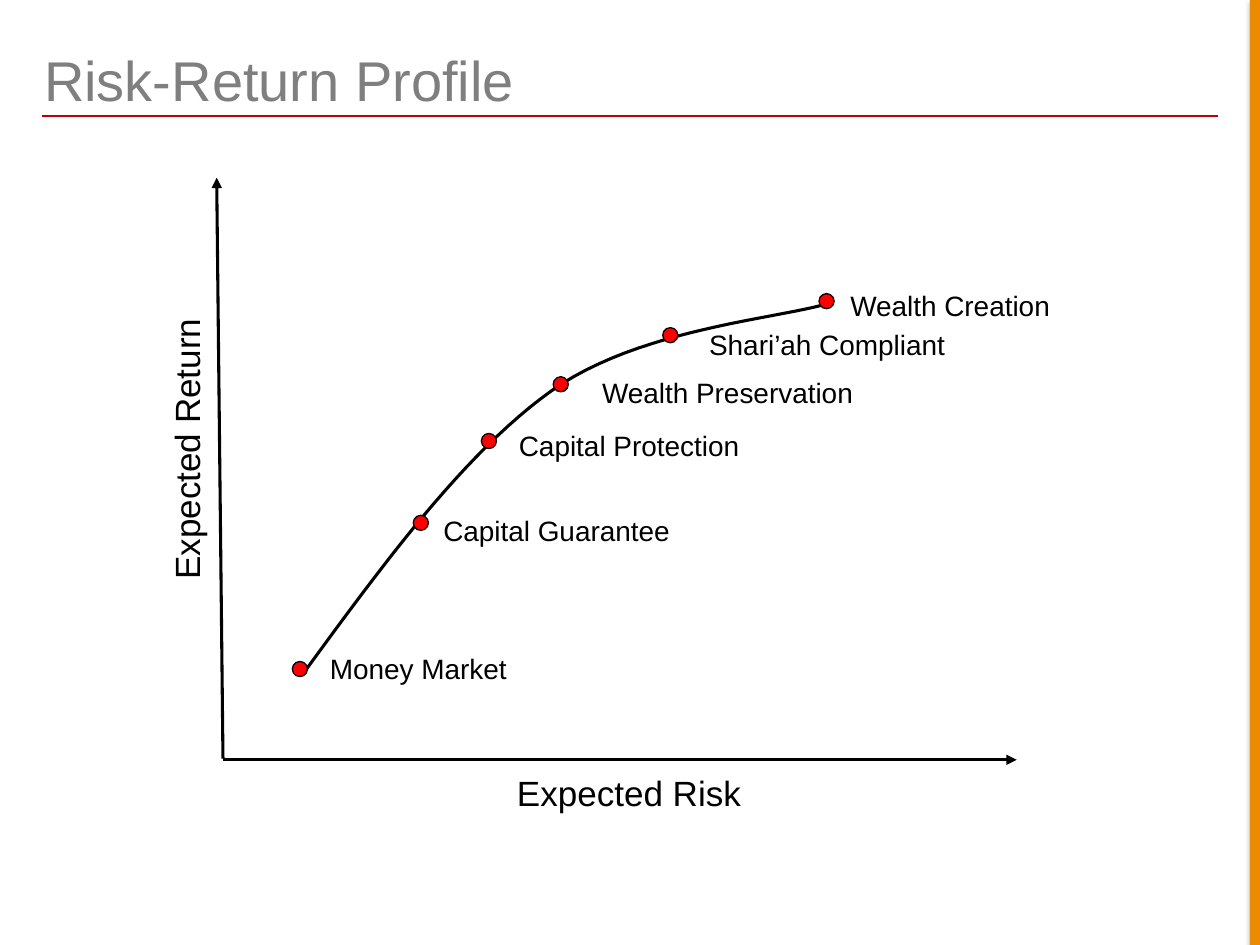
from lxml.etree import SubElement
from pptx import Presentation
from pptx.dml.color import RGBColor
from pptx.enum.shapes import MSO_CONNECTOR, MSO_SHAPE
from pptx.enum.text import MSO_ANCHOR, PP_ALIGN
from pptx.oxml.ns import qn
from pptx.util import Inches, Pt

BLACK = RGBColor(0, 0, 0)
GREY = RGBColor(0x7F, 0x7F, 0x7F)
RED = RGBColor(0xFF, 0, 0)
WINE = RGBColor(0xC0, 0, 0)
ORANGE = RGBColor(0xED, 0x8B, 0)

# Places are percent of slide width and height.
TITLE = "Risk-Return Profile"
FUNDS = [
    ("Money Market", (23.8, 70.8), (25.2, 68.27), 19.3),
    ("Capital Guarantee", (33.4, 55.33), (34.2, 53.73), 24.4),
    ("Capital Protection", (38.8, 46.67), (40.2, 44.67), 23.3),
    ("Wealth Preservation", (44.5, 40.67), (46.8, 39.07), 23.7),
    ("Shari’ah Compliant", (53.2, 35.47), (55.3, 34), 23.7),
    ("Wealth Creation", (65.6, 31.87), (66.5, 29.87), 24.4),
]
AXES = [((17.7, 80.27), (17.2, 18.8)), ((17.7, 80.4), (80.7, 80.4))]
CURVE = [
    ((24, 71.4), (30.4, 59.73), (36.8, 48), (43.8, 41.33)),
    ((43.8, 41.33), (50.7, 34.8), (61.7, 33.73), (65.7, 32.13)),
]
STEPS = 24
DOT = Inches(0.12)

deck = Presentation()
deck.slide_width, deck.slide_height = Inches(10), Inches(7.5)
slide = deck.slides.add_slide(deck.slide_layouts[6])
shapes = slide.shapes


def place(x, y):
    return round(deck.slide_width * x / 100), round(deck.slide_height * y / 100)


def write(text, at, size, points, color=BLACK, align=PP_ALIGN.LEFT):
    box = shapes.add_textbox(*place(*at), *place(*size))
    frame = box.text_frame
    frame.word_wrap = True
    para = frame.paragraphs[0]
    para.text = text
    para.alignment = align
    para.font.name = "Arial"
    para.font.size = Pt(points)
    para.font.color.rgb = color
    return box


def draw(start, end, color, width, arrow=False):
    line = shapes.add_connector(MSO_CONNECTOR.STRAIGHT, *place(*start), *place(*end))
    line.line.color.rgb = color
    line.line.width = Pt(width)
    if arrow:
        SubElement(line.line._get_or_add_ln(), qn("a:tailEnd"), type="triangle")
    SubElement(line._element.spPr, qn("a:effectLst"))


def bezier(points, t):
    shares = ((1 - t) ** 3, 3 * t * (1 - t) ** 2, 3 * t * t * (1 - t), t ** 3)
    return tuple(sum(s * v for s, v in zip(shares, axis)) for axis in zip(*points))


bar = shapes.add_shape(MSO_SHAPE.RECTANGLE, *place(99.2, 0), *place(0.8, 100))
bar.fill.solid()
bar.fill.fore_color.rgb = ORANGE
bar.line.fill.background()
bar.shadow.inherit = False
effects = bar._element.spPr.find(qn("a:effectLst"))
shade = SubElement(effects, qn("a:outerShdw"), blurRad=str(Pt(3.1)),
                   dist=str(Pt(1.8)), dir="5400000", rotWithShape="0")
tint = SubElement(shade, qn("a:srgbClr"), val="000000")
SubElement(tint, qn("a:alpha"), val="35000")

draw((3.3, 12.27), (96.7, 12.27), WINE, 1)
title = write(TITLE, (0, 0), (100, 16.67), 32, GREY)
title.text_frame.margin_left = Inches(0.35)
title.text_frame.vertical_anchor = MSO_ANCHOR.MIDDLE

for start, end in AXES:
    draw(start, end, BLACK, 1.75, arrow=True)

trail = [place(*bezier(part, n / STEPS)) for part in CURVE for n in range(1, STEPS + 1)]
pen = shapes.build_freeform(*place(*CURVE[0][0]))
pen.add_line_segments(trail, close=False)
curve = pen.convert_to_shape()
curve.fill.background()
curve.line.color.rgb = BLACK
curve.line.width = Pt(1.75)
curve.shadow.inherit = False

write("Expected Risk", (36, 80.93), (23.8, 11.87), 20, align=PP_ALIGN.RIGHT)
write("Expected Return", (-0.2, 39.87), (29.9, 5.73), 20).rotation = 270

for name, spot, corner, width in FUNDS:
    x, y = place(*spot)
    dot = shapes.add_shape(MSO_SHAPE.OVAL, x - DOT // 2, y - DOT // 2, DOT, DOT)
    dot.fill.solid()
    dot.fill.fore_color.rgb = RED
    dot.line.color.rgb = BLACK
    dot.line.width = Pt(0.75)
    dot.shadow.inherit = False
    write(name, corner, (width, 4.93), 16)

deck.save("out.pptx")
